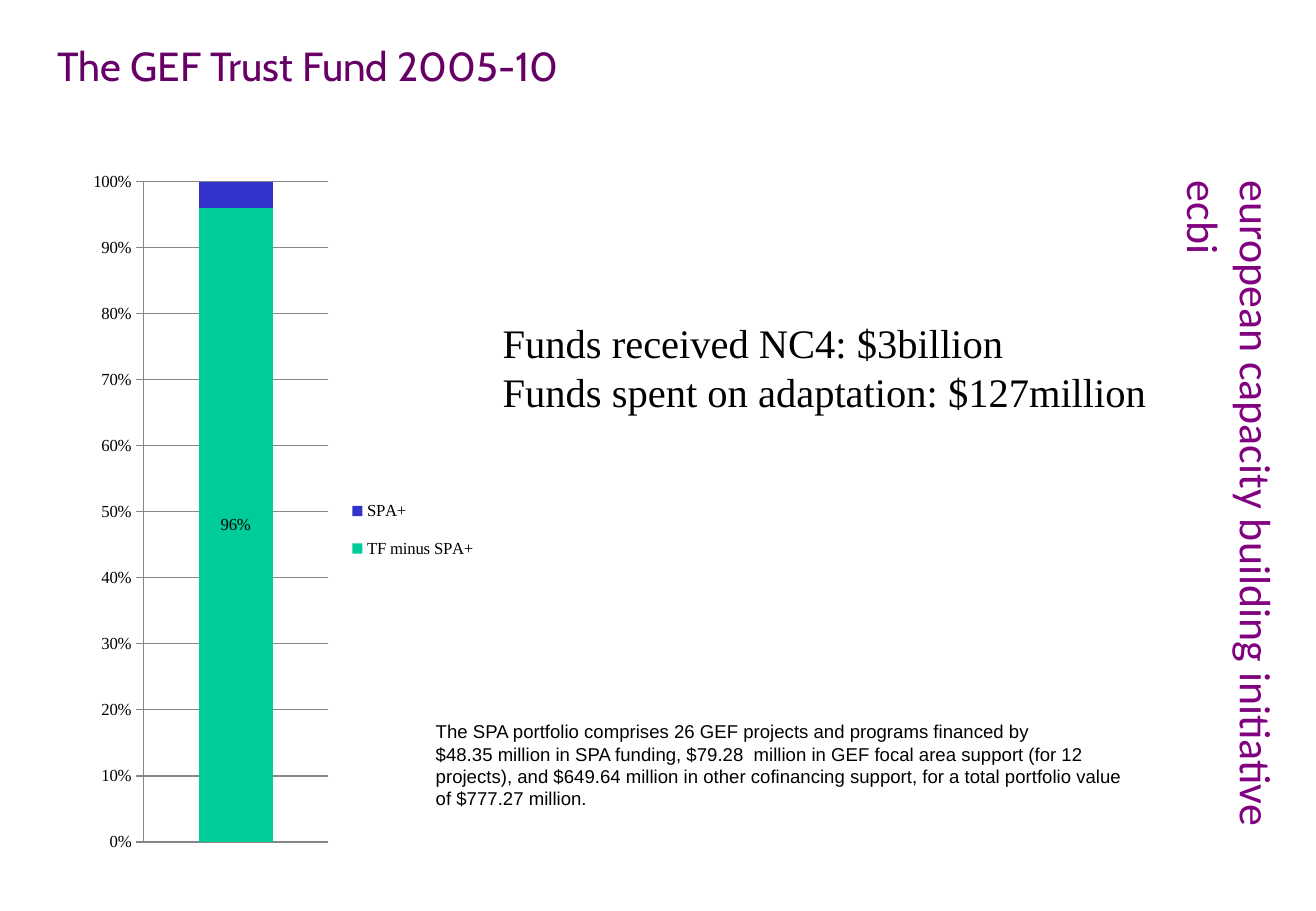
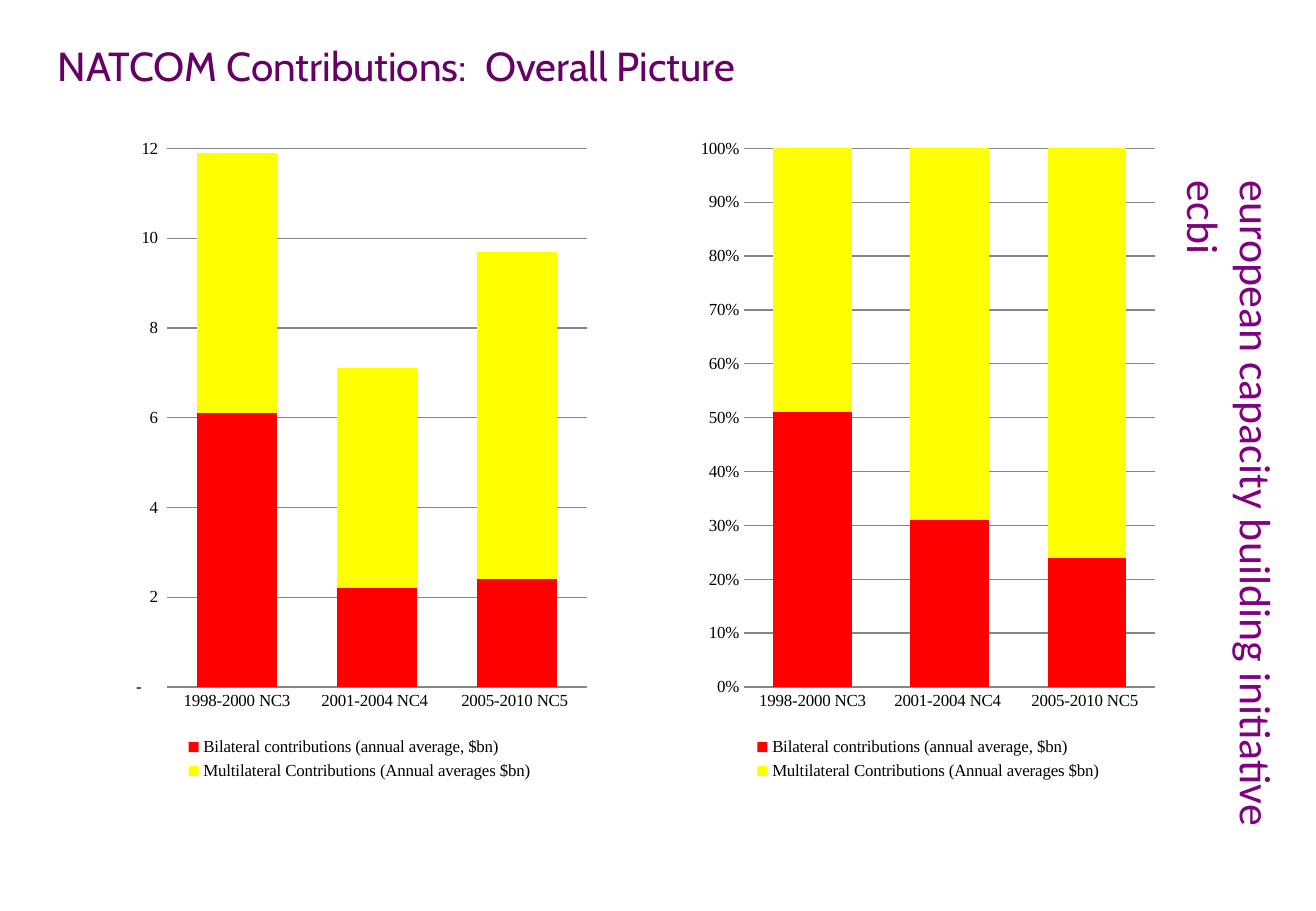
from dataclasses import dataclass
from typing import Optional

from lxml import etree
from pptx import Presentation
from pptx.chart import data as chart_data
from pptx.dml.color import RGBColor
from pptx.enum import chart as chart_enum, text as text_enum
from pptx.oxml import ns
from pptx.util import Cm, Pt


@dataclass(frozen=True)
class Theme:
    title_color: str = "660066"
    band_color: str = "800080"
    text_color: str = "000000"
    grid_color: str = "868686"
    title_font: str = "Cabin"
    band_font: str = "Calibri"
    note_font: str = "Arial"
    serif_font: str = "Times New Roman"
    band_size: float = 26
    heading_size: float = 24
    note_size: float = 11
    chart_size: float = 10


@dataclass(frozen=True)
class Box:
    """Left, top, width and height in centimetres."""
    left: float
    top: float
    width: float
    height: float

    def lengths(self) -> tuple:
        return Cm(self.left), Cm(self.top), Cm(self.width), Cm(self.height)


@dataclass(frozen=True)
class Series:
    name: str
    values: tuple
    color: str
    labelled: bool = False


@dataclass(frozen=True)
class ColumnChart:
    box: Box
    categories: tuple
    series: tuple
    maximum: float
    percent: bool = True
    gap_width: int = 75
    legend_right: bool = False
    show_category_axis: bool = False
    show_value_line: bool = False
    plot_area: Optional[tuple] = None
    legend_area: Optional[tuple] = None


THEME = Theme()
FIXED_SPACE = chr(160)  # keeps an amount and its unit on one line
PERCENT_FORMAT = "0%"
NUMBER_FORMAT = '_-* #,##0_-;\\-* #,##0_-;_-* "-"??_-;_-@_'


# Text
def write(text_frame, text: str, *, size: float, font: str, color: str,
          align=text_enum.PP_ALIGN.LEFT, anchor=text_enum.MSO_ANCHOR.TOP,
          wrap: bool = True) -> None:
    text_frame.word_wrap = wrap
    text_frame.vertical_anchor = anchor
    text_frame.auto_size = text_enum.MSO_AUTO_SIZE.NONE
    text_frame.text = text
    for paragraph in text_frame.paragraphs:
        paragraph.alignment = align
        paragraph.font.size = Pt(size)
        paragraph.font.name = font
        paragraph.font.color.rgb = RGBColor.from_string(color)


def add_text(slide, box: Box, text: str, **text_format):
    shape = slide.shapes.add_textbox(*box.lengths())
    write(shape.text_frame, text, **text_format)
    return shape


# Shared parts: title position and vertical band on the layout
def prepare_layout(layout, slide) -> None:
    title = layout.placeholders[0]
    title.left, title.top, title.width, title.height = Box(0.95, 0.73, 22.91, 1.27).lengths()
    band = add_text(slide, Box(25.06, 3.53, 1.9, 15.21),
                    "european capacity building initiative ecbi",
                    size=THEME.band_size, font=THEME.band_font, color=THEME.band_color)
    band.element.find(".//" + ns.qn("a:bodyPr")).set("vert", "eaVert")
    layout.shapes.element.append(band.element)


def set_title(slide, text: str) -> None:
    write(slide.shapes.title.text_frame, text, size=THEME.heading_size,
          font=THEME.title_font, color=THEME.title_color,
          align=text_enum.PP_ALIGN.JUSTIFY)


# Charts
def set_manual_layout(layout, fractions: tuple, inner: bool = False) -> None:
    manual = etree.SubElement(layout, ns.qn("c:manualLayout"))
    settings = [("layoutTarget", "inner")] if inner else []
    settings += [("xMode", "edge"), ("yMode", "edge"), *zip("xywh", fractions)]
    for tag, value in settings:
        etree.SubElement(manual, ns.qn("c:" + tag)).set("val", str(value))


def get_layout(parent, index: int):
    layout = parent.find(ns.qn("c:layout"))
    if layout is None:
        layout = etree.Element(ns.qn("c:layout"))
        parent.insert(index, layout)
    return layout


def style_line(line) -> None:
    line.color.rgb = RGBColor.from_string(THEME.grid_color)
    line.width = Pt(0.75)


def style_axes(chart, column_chart: ColumnChart) -> None:
    marks = chart_enum.XL_TICK_MARK
    value_axis, category_axis = chart.value_axis, chart.category_axis
    value_axis.minimum_scale = 0
    value_axis.maximum_scale = column_chart.maximum
    value_axis.has_major_gridlines = True
    style_line(value_axis.major_gridlines.format.line)
    value_axis.tick_labels.number_format = PERCENT_FORMAT if column_chart.percent else NUMBER_FORMAT
    value_axis.tick_labels.number_format_is_linked = False
    if column_chart.show_value_line:
        value_axis.major_tick_mark = marks.CROSS
        style_line(value_axis.format.line)
    else:
        value_axis.major_tick_mark = marks.NONE
        value_axis.format.line.fill.background()
    category_axis.visible = column_chart.show_category_axis
    category_axis.major_tick_mark = marks.NONE
    style_line(category_axis.format.line)


def add_column_chart(slide, column_chart: ColumnChart) -> None:
    data = chart_data.CategoryChartData()
    data.categories = column_chart.categories
    for series in column_chart.series:
        data.add_series(series.name, series.values)
    kinds = chart_enum.XL_CHART_TYPE
    kind = kinds.COLUMN_STACKED_100 if column_chart.percent else kinds.COLUMN_STACKED
    chart = slide.shapes.add_chart(kind, *column_chart.box.lengths(), data).chart

    chart.has_title = False
    chart.font.size = Pt(THEME.chart_size)
    chart.font.name = THEME.serif_font
    chart.font.color.rgb = RGBColor.from_string(THEME.text_color)
    positions = chart_enum.XL_LEGEND_POSITION
    chart.has_legend = True
    chart.legend.position = positions.RIGHT if column_chart.legend_right else positions.BOTTOM
    chart.legend.include_in_layout = False

    plot = chart.plots[0]
    plot.vary_by_categories = False
    plot.gap_width = column_chart.gap_width
    plot.overlap = 100
    for drawn, series in zip(plot.series, column_chart.series):
        drawn.format.fill.solid()
        drawn.format.fill.fore_color.rgb = RGBColor.from_string(series.color)
        if series.labelled:
            drawn.data_labels.show_value = True
            drawn.data_labels.number_format = PERCENT_FORMAT
            drawn.data_labels.number_format_is_linked = False
    style_axes(chart, column_chart)
    if column_chart.plot_area:
        plot_area = chart.element.find(".//" + ns.qn("c:plotArea"))
        set_manual_layout(get_layout(plot_area, 0), column_chart.plot_area, inner=True)
    if column_chart.legend_area:
        legend = chart.element.find(".//" + ns.qn("c:legend"))
        set_manual_layout(get_layout(legend, 1), column_chart.legend_area)


# Slides
def build_trust_fund(slide) -> None:
    set_title(slide, "The GEF Trust Fund 2005-10")
    add_text(slide, Box(8.86, 14.93, 14.91, 2.13),
             "The SPA portfolio comprises 26 GEF projects and programs financed by "
             f"$48.35{FIXED_SPACE}million in SPA funding, $79.28{FIXED_SPACE} million in GEF "
             f"focal area support (for 12 projects), and $649.64{FIXED_SPACE}million in other "
             "cofinancing support, for a total portfolio value of $777.27 million.",
             size=THEME.note_size, font=THEME.note_font, color=THEME.text_color,
             anchor=text_enum.MSO_ANCHOR.MIDDLE)
    add_column_chart(slide, ColumnChart(
        Box(1.95, 3.05, 8.13, 15.01), ("1",),
        (Series("TF minus SPA+", (0.96,), "00CC99", labelled=True),
         Series("SPA+", (0.04,), "3333CC")),
        maximum=1, gap_width=150, legend_right=True, show_value_line=True,
        plot_area=(0.12, 0.05, 0.48, 0.92), legend_area=(0.65, 0.47, 0.34, 0.13)))
    add_text(slide, Box(10.26, 6.53, 14.07, 2.31),
             "Funds received NC4: $3billion\nFunds spent on adaptation: $127million",
             size=THEME.heading_size, font=THEME.serif_font, color=THEME.text_color,
             wrap=False)


def build_contributions(slide) -> None:
    set_title(slide, "NATCOM Contributions:  Overall Picture")
    periods = ("1998-2000 NC3", "2001-2004 NC4 ", "2005-2010 NC5 ")
    # left edge, bilateral values, multilateral values, axis maximum, percent
    panels = (
        (2.56, (6.1, 2.2, 2.4), (5.8, 4.9, 7.3), 12, False),
        (14.45, (51, 31, 24), (49, 69, 76), 1, True),
    )
    for left, bilateral, multilateral, maximum, percent in panels:
        add_column_chart(slide, ColumnChart(
            Box(left, 2.63, 9.9, 13.79), periods,
            (Series("Bilateral contributions (annual average, $bn)", bilateral, "FF0000"),
             Series("Multilateral Contributions (Annual averages $bn)", multilateral, "FFFF00")),
            maximum=maximum, percent=percent, show_category_axis=True))


def main() -> None:
    presentation = Presentation()
    presentation.slide_width, presentation.slide_height = Cm(27.51), Cm(19.05)
    layout = presentation.slide_layouts.get_by_name("Title Only")
    slides = [presentation.slides.add_slide(layout) for _ in range(2)]
    prepare_layout(layout, slides[0])
    for build, slide in zip((build_trust_fund, build_contributions), slides):
        build(slide)
    presentation.save("out.pptx")


if __name__ == "__main__":
    main()
